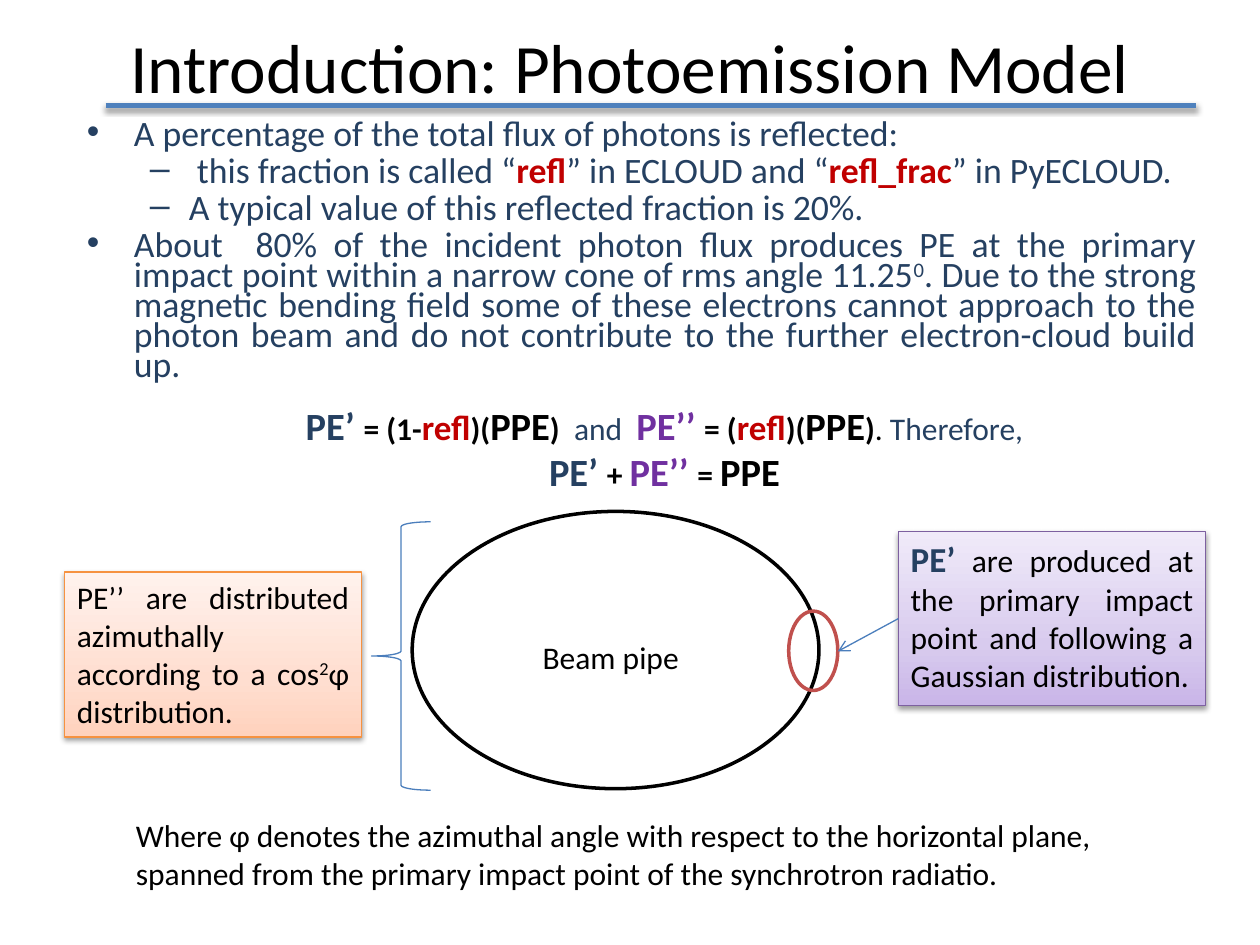
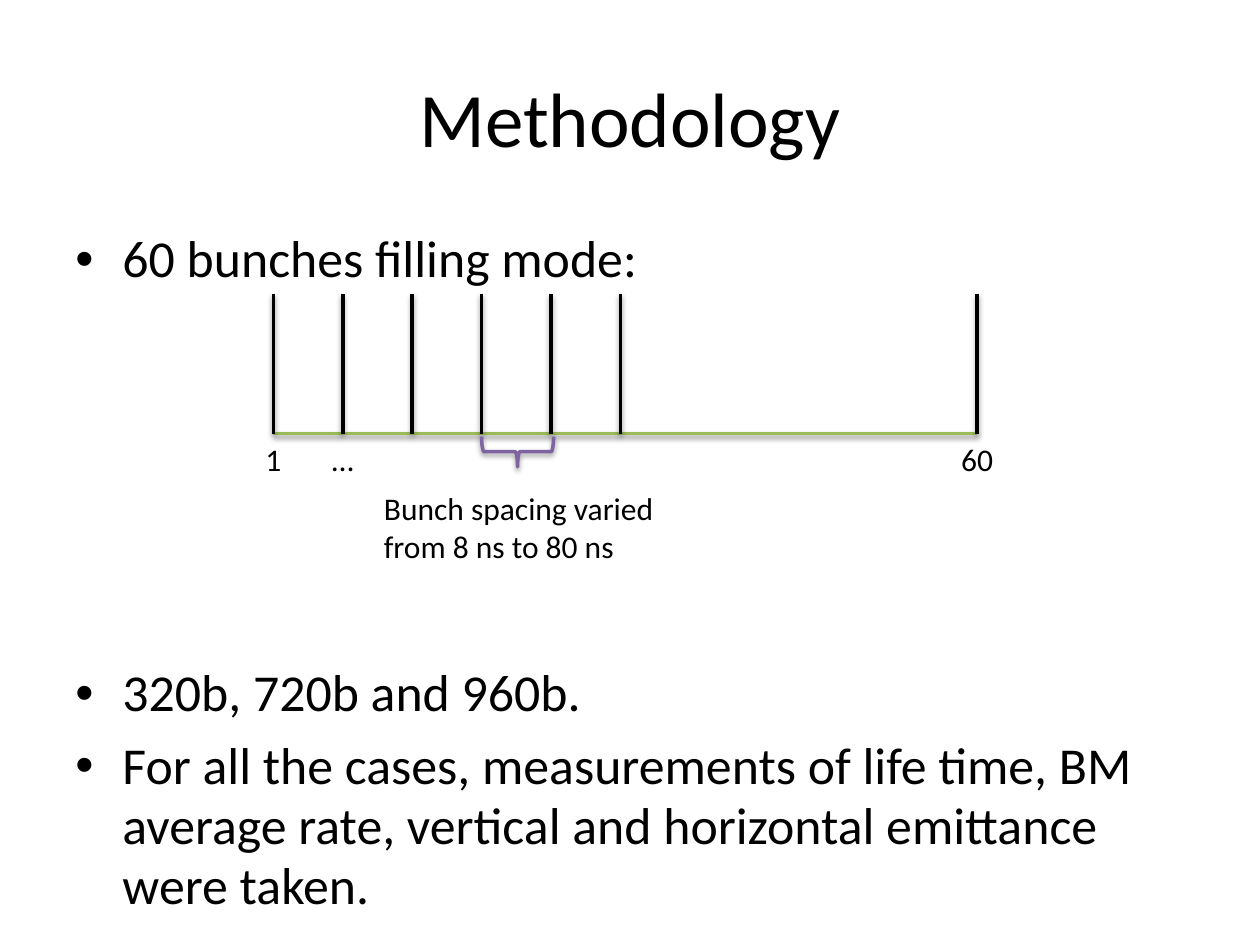
from copy import deepcopy

from lxml import etree
from pptx import Presentation
from pptx.dml.color import RGBColor
from pptx.enum.shapes import MSO_CONNECTOR, MSO_SHAPE
from pptx.enum.text import MSO_ANCHOR, PP_ALIGN
from pptx.oxml.ns import qn
from pptx.util import Cm, Pt

LINE = MSO_CONNECTOR.STRAIGHT
RECT, OVAL, BRACE = MSO_SHAPE.RECTANGLE, MSO_SHAPE.OVAL, MSO_SHAPE.LEFT_BRACE
LEFT, MID, JUST = PP_ALIGN.LEFT, PP_ALIGN.CENTER, PP_ALIGN.JUSTIFY
TOP, CENTER = MSO_ANCHOR.TOP, MSO_ANCHOR.MIDDLE

FONT = "Calibri"
HUES = {
    "black": "000000", "white": "FFFFFF", "navy": "254061", "red": "C00000",
    "violet": "7030A0", "rule": "4F81BD", "thin": "4B7EBC", "brick": "C0504D",
    "green": "9BBB59", "plum": "8064A2", "purple": "7D60A0", "orange": "F69240",
}
LILAC = [(0, "C9B5E8"), (0.35, "D8CBEE"), (1, "F0EAF9")]
PEACH = [(0, "FFD2BD"), (0.35, "FFDED0"), (1, "FFF2ED")]


def hue(name):
    return RGBColor.from_string(HUES.get(name, name))


def box(at):
    return [Cm(v) for v in at]


# ---- Effects ----
def shade(item, on):
    """Give a shape or line the soft drop shadow, or none at all."""
    effects = etree.SubElement(item._element.spPr, qn("a:effectLst"))
    if on:
        shadow = etree.SubElement(effects, qn("a:outerShdw"), blurRad="39370",
                                  dist="20320", dir="5400000", rotWithShape="0")
        color = etree.SubElement(shadow, qn("a:srgbClr"), val=HUES["black"])
        etree.SubElement(color, qn("a:alpha"), val="38000")


def blend(item, stops):
    """Fill upward through the given colour stops."""
    item.fill.gradient()
    item.fill.gradient_angle = 90
    first = item._element.spPr.find(".//" + qn("a:gs"))
    first.addnext(deepcopy(first))
    for stop, (place, color) in zip(item.fill.gradient_stops, stops):
        stop.position = place
        stop.color.rgb = hue(color)


# ---- Text ----
def bullet(para, mark, indent, hang):
    props = para._p.get_or_add_pPr()
    props.set("marL", str(Cm(indent)))
    props.set("indent", str(-Cm(hang)))
    etree.SubElement(props, qn("a:buFont"), typeface="Arial")
    etree.SubElement(props, qn("a:buChar"), char=mark)


def write(frame, paras, size=18, color="black", align=LEFT, anchor=TOP,
          lead=None, gaps=(), marks=()):
    """Each paragraph is a string or a list of runs: a string, or
    (string, overrides) with size, color, bold and base."""
    frame.word_wrap = True
    frame.vertical_anchor = anchor
    for i, runs in enumerate(paras):
        para = frame.add_paragraph() if i else frame.paragraphs[0]
        para.alignment = align
        if lead:
            para.line_spacing = lead
        if gaps:
            para.space_before = Pt(gaps[i])
        if marks:
            bullet(para, *marks[i])
        for part in [runs] if isinstance(runs, str) else runs:
            words, look = (part, {}) if isinstance(part, str) else part
            run = para.add_run()
            run.text = words
            font = run.font
            font.name = FONT
            font.size = Pt(look.get("size", size))
            font.bold = look.get("bold", False)
            font.color.rgb = hue(look.get("color", color))
            if "base" in look:
                font._element.set("baseline", str(look["base"]))


def bold(words, size=18, color="black"):
    return words, {"size": size, "color": color, "bold": True}


def label(slide, at, *paras, **look):
    write(slide.shapes.add_textbox(*box(at)).text_frame, paras, **look)


def title(slide, words, top, high, size):
    label(slide, (1.27, top, 22.86, high), words, size=size, align=MID,
          anchor=CENTER)


# ---- Shapes and lines ----
def shape(slide, kind, at, edge, width, fill=None, shadow=False, turn=0):
    item = slide.shapes.add_shape(kind, *box(at))
    if isinstance(fill, list):
        blend(item, fill)
    elif fill:
        item.fill.solid()
        item.fill.fore_color.rgb = hue(fill)
    else:
        item.fill.background()
    item.line.color.rgb = hue(edge)
    item.line.width = Pt(width)
    item.rotation = turn
    shade(item, shadow)
    return item


def line(slide, ends, color, width, shadow=True, arrow=False):
    item = slide.shapes.add_connector(LINE, *box(ends))
    item.line.color.rgb = hue(color)
    item.line.width = Pt(width)
    if arrow:
        etree.SubElement(item.line._get_or_add_ln(), qn("a:tailEnd"), type="arrow")
    shade(item, shadow)


def note(slide, at, edge, fill, runs):
    card = shape(slide, RECT, at, edge, 0.75, fill, shadow=True)
    write(card.text_frame, [runs], align=JUST)


# ---- Slides ----
def model(slide):
    title(slide, "Introduction: Photoemission Model", 0.56, 1.55, 39.6)
    line(slide, (2.13, 2.13, 24.1, 2.13), "rule", 3)

    # Main points
    dot, dash = ("•", 0.95, 0.95), ("–", 2.06, 0.79)
    label(slide, (1.5, 2.34, 22.86, 6.81),
          "A percentage of the total flux of photons is reflected:",
          [" this fraction is called “", bold("refl", 20.4, "red"),
           "” in ECLOUD and “", bold("refl_frac", 20.4, "red"),
           "” in PyECLOUD."],
          "A typical value of this reflected fraction is 20%.",
          ["About  80% of the incident photon flux produces PE at the primary "
           "impact point within a narrow cone of rms angle 11.25",
           ("0", {"base": 30000}),
           ". Due to the strong magnetic bending field some of these electrons "
           "cannot approach to the photon beam and do not contribute to the "
           "further electron-cloud build up."],
          size=20.4, color="navy", align=JUST, lead=0.7, gaps=[4.1] * 4,
          marks=[dot, dash, dash, dot])

    # Equations
    first = bold("PE’ ", 22, "navy")
    second = bold("PE’’ ", 22, "violet")
    refl, total = bold("refl", 20, "red"), bold("PPE", 22)
    label(slide, (2.69, 7.98, 21.41, 2.13),
          [first, bold("= (1-"), refl, bold(")("), total, bold(")  "),
           ("and  ", {"color": "navy"}), second, bold("= ("), refl, bold(")("),
           total, bold(")"), ". ", ("Therefore,", {"color": "navy"})],
          [first, bold("+ "), second, bold("= "), total], align=MID)

    # Beam pipe and impact point
    shape(slide, OVAL, (8.31, 10.31, 8.2, 5.59), "black", 2, "white")
    shape(slide, OVAL, (15.9, 12.32, 0.99, 1.6), "brick", 2)
    shape(slide, BRACE, (7.49, 10.52, 1.19, 5.41), "thin", 0.75)
    label(slide, (10.69, 12.73, 4.39, 1.02), "Beam pipe")

    # Notes on both sides
    note(slide, (18.11, 10.72, 6.2, 3.51), "purple", LILAC,
         [bold("PE’", 20, "navy"), " are produced at the primary impact point "
          "and following a Gaussian distribution."])
    line(slide, (18.11, 12.47, 16.89, 13.13), "thin", 0.75, False, True)
    note(slide, (1.3, 11.53, 5.99, 3.33), "orange", PEACH,
         ["PE’’ are distributed azimuthally according to a cos",
          ("2", {"base": 30000}), "φ distribution."])
    label(slide, (2.49, 16.33, 21.01, 1.8),
          "Where φ denotes the azimuthal angle with respect to the horizontal "
          "plane, spanned from the primary impact point of the synchrotron "
          "radiatio.")


def method(slide):
    title(slide, "Methodology", 0.76, 3.18, 44)
    label(slide, (1.27, 4.5, 22.86, 12.57),
          "60 bunches filling mode:", "320b, 720b and 960b.",
          "For all the cases, measurements of life time, BM average rate, "
          "vertical and horizontal emittance were taken.",
          size=29.6, lead=0.97, gaps=(0, 213.5, 7),
          marks=[("•", 0.95, 0.95)] * 3)

    # Bunch train
    left, right, top, base, step = 5.51, 19.7, 5.92, 8.74, 1.4
    line(slide, (left, base, right, base), "green", 2)
    bars = [left + step * i for i in range(6)] + [right]
    for x in bars:
        line(slide, (x, base, x, top), "black", 2)
    for x, words in ((bars[0], "1"), (bars[1], "…"), (right, "60")):
        label(slide, (x - 0.7, base, 1.4, 1.02), words, align=MID)

    # Spacing between two bunches
    shape(slide, BRACE, (10.13, 8.38, 0.61, 1.45), "plum", 2, shadow=True,
          turn=270)
    label(slide, (7.49, 9.73, 5.99, 1.8),
          "Bunch spacing varied from 8 ns to 80 ns")


def main():
    deck = Presentation()
    deck.slide_width, deck.slide_height = Cm(25.4), Cm(19.05)
    for build in (model, method):
        build(deck.slides.add_slide(deck.slide_layouts[6]))
    deck.save("out.pptx")


if __name__ == "__main__":
    main()
